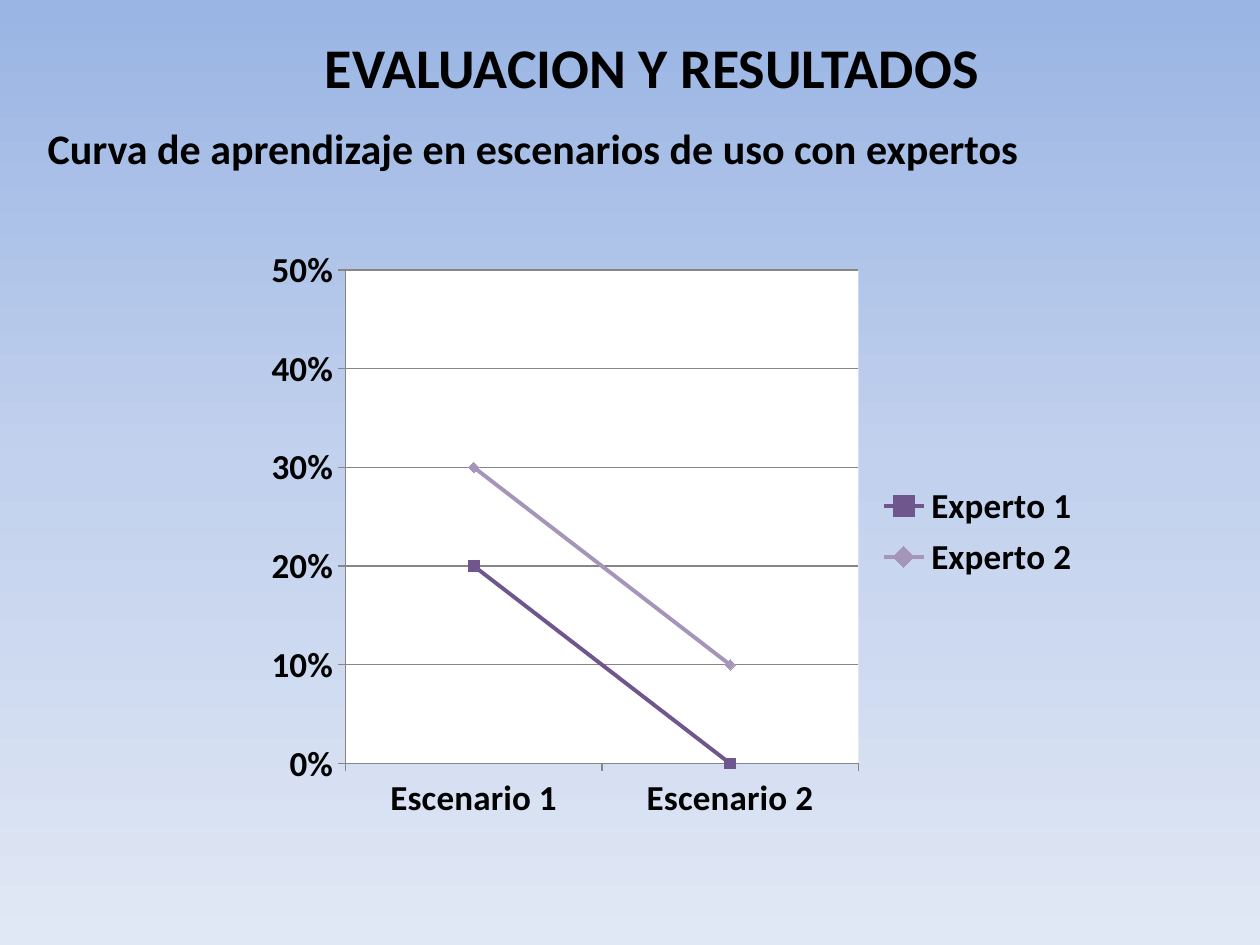
import copy

import lxml.etree
import pptx
import pptx.chart.data
import pptx.dml.color
import pptx.enum.chart
import pptx.enum.dml
import pptx.oxml
import pptx.oxml.ns
import pptx.util

Inches = pptx.util.Inches
Pt = pptx.util.Pt
qn = pptx.oxml.ns.qn

FONT = "Calibri"
COLORS = {
    "text": "000000",
    "plot": "FFFFFF",
    "line": "868686",
    "expert_1": "6F568D",
    "expert_2": "A595B9",
}
BACKGROUND = [(0, "9AB5E4"), (0.5, "C2D1ED"), (1, "E1E8F5")]
HEADINGS = [  # text, (left, top, width, height), size
    ("EVALUACION Y RESULTADOS", (2.48, 0.21, 5.44, 0.94), 32),
    ("Curva de aprendizaje en escenarios de uso con expertos",
     (0.28, 0.92, 7.98, 0.5), 24),
]
SCENARIOS = ["Escenario 1", "Escenario 2"]
MARKERS = pptx.enum.chart.XL_MARKER_STYLE
SERIES = [  # name, values, colour, marker
    ("Experto 1", (0.2, 0), "expert_1", MARKERS.SQUARE),
    ("Experto 2", (0.3, 0.1), "expert_2", MARKERS.DIAMOND),
]
CHART_BOX = (2.01, 1.86, 6.67, 4.72)
PLOT_LAYOUT = {"x": 0.11, "y": 0.06, "w": 0.61, "h": 0.83}  # shares of the chart


def rgb(value):
    return pptx.dml.color.RGBColor.from_string(value)


def set_font(font, size):
    font.name = FONT
    font.size = Pt(size)
    font.bold = True
    font.color.rgb = rgb(COLORS["text"])


def set_line(line, color, width):
    line.color.rgb = rgb(color)
    line.width = Pt(width)


def paint_background(page):
    fill = page.background.fill
    fill.gradient()
    fill.gradient_angle = 270
    stop_list = page.element.find(".//" + qn("a:gsLst"))
    while len(stop_list) < len(BACKGROUND):
        stop_list.append(copy.deepcopy(stop_list[0]))
    for stop, (position, color) in zip(fill.gradient_stops, BACKGROUND):
        stop.position = position
        stop.color.rgb = rgb(color)


def add_heading(page, text, box, size):
    frame = page.shapes.add_textbox(*map(Inches, box)).text_frame
    frame.word_wrap = False
    span = frame.paragraphs[0].add_run()
    span.text = text
    set_font(span.font, size)


def style_plot_area(chart):
    """Fix the inner plot rectangle and fill it."""
    area = chart.element.find(".//" + qn("c:plotArea"))
    for old in area.findall(qn("c:layout")):
        area.remove(old)
    layout = lxml.etree.Element(qn("c:layout"))
    area.insert(0, layout)
    manual = lxml.etree.SubElement(layout, qn("c:manualLayout"))
    settings = {"layoutTarget": "inner", "xMode": "edge", "yMode": "edge", **PLOT_LAYOUT}
    for name, value in settings.items():
        lxml.etree.SubElement(manual, qn("c:" + name), val=str(value))
    properties = lxml.etree.SubElement(area, qn("c:spPr"))
    fill = lxml.etree.SubElement(properties, qn("a:solidFill"))
    lxml.etree.SubElement(fill, qn("a:srgbClr"), val=COLORS["plot"])


def add_learning_chart(page):
    data = pptx.chart.data.CategoryChartData(number_format="0%")
    data.categories = SCENARIOS
    for name, values, _, _ in SERIES:
        data.add_series(name, values)
    chart = page.shapes.add_chart(
        pptx.enum.chart.XL_CHART_TYPE.LINE_MARKERS, *map(Inches, CHART_BOX), data).chart
    chart.has_title = False
    set_font(chart.font, 20)
    chart.plots[0].vary_by_categories = False

    chart.has_legend = True
    chart.legend.position = pptx.enum.chart.XL_LEGEND_POSITION.RIGHT
    chart.legend.include_in_layout = False
    set_font(chart.legend.font, 20)

    for axis in (chart.category_axis, chart.value_axis):
        axis.major_tick_mark = pptx.enum.chart.XL_TICK_MARK.OUTSIDE
        set_font(axis.tick_labels.font, 20)
        set_line(axis.format.line, COLORS["line"], 0.75)
    scale = chart.value_axis
    scale.minimum_scale, scale.maximum_scale, scale.major_unit = 0, 0.5, 0.1
    scale.tick_labels.number_format = "0%"
    scale.tick_labels.number_format_is_linked = False
    scale.has_major_gridlines = True
    set_line(scale.major_gridlines.format.line, COLORS["line"], 0.75)

    for series, (_, _, color, marker) in zip(chart.plots[0].series, SERIES):
        series.smooth = False
        set_line(series.format.line, COLORS[color], 2.25)
        series.marker.style = marker
        series.marker.size = 6
        series.marker.format.fill.solid()
        series.marker.format.fill.fore_color.rgb = rgb(COLORS[color])
        set_line(series.marker.format.line, COLORS[color], 0.75)
    style_plot_area(chart)


def main():
    deck = pptx.Presentation()
    deck.slide_width, deck.slide_height = Inches(10), Inches(7.5)
    page = deck.slides.add_slide(deck.slide_layouts[6])
    paint_background(page)
    add_learning_chart(page)
    for heading in HEADINGS:
        add_heading(page, *heading)
    deck.save("out.pptx")


if __name__ == "__main__":
    main()
